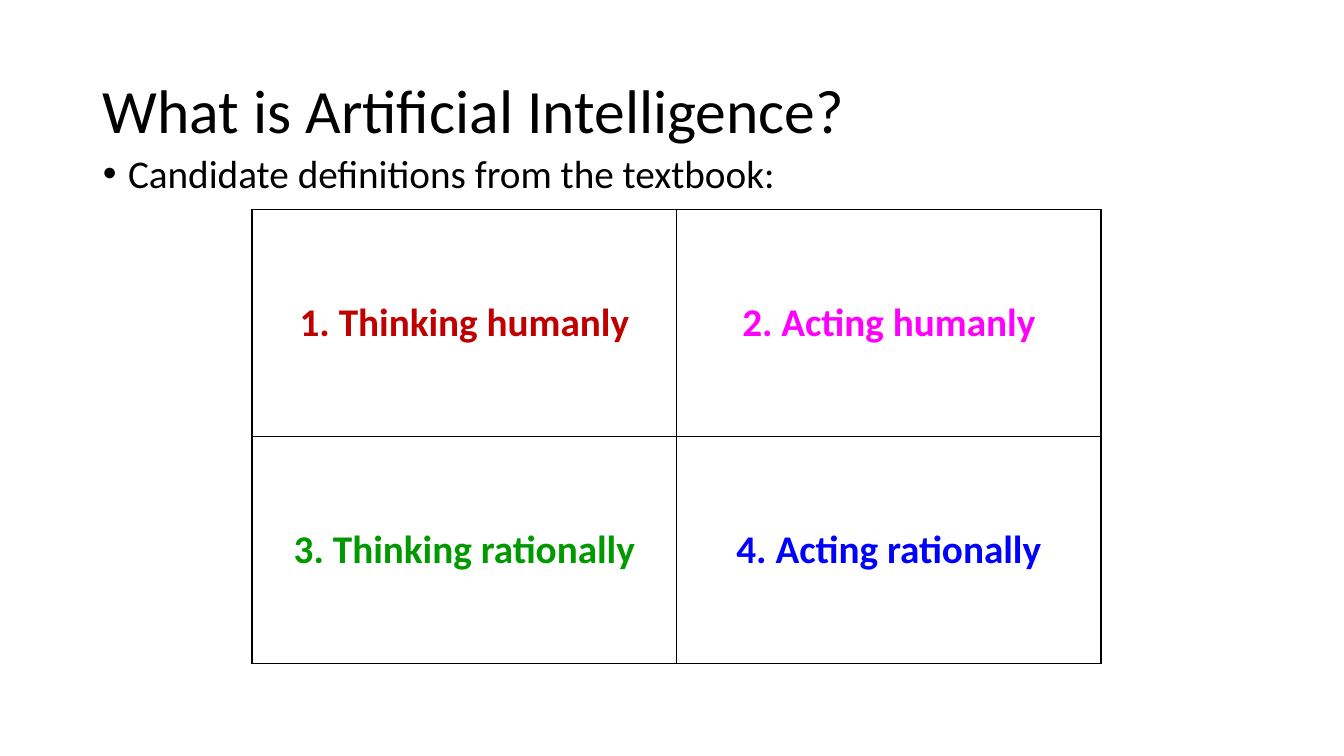
"""Build a slide of four candidate definitions of artificial intelligence."""
from lxml import etree
from pptx import Presentation
from pptx.dml.color import RGBColor
from pptx.enum.text import MSO_ANCHOR, MSO_AUTO_SIZE, PP_ALIGN
from pptx.oxml.ns import qn
from pptx.util import Inches, Pt

MIDDLE, TOP = MSO_ANCHOR.MIDDLE, MSO_ANCHOR.TOP
LEFT, CENTER = PP_ALIGN.LEFT, PP_ALIGN.CENTER
FIXED = MSO_AUTO_SIZE.NONE

FONT = "Calibri"
COLORS = {"black": "000000", "white": "FFFFFF", "red": "C00000",
          "pink": "FF00FF", "green": "009900", "blue": "0000FF"}
TITLE = "What is Artificial Intelligence?"
LEAD = "Candidate definitions from the textbook:"
GRID = [
    [("1. Thinking humanly", "red"), ("2. Acting humanly", "pink")],
    [("3. Thinking rationally", "green"), ("4. Acting rationally", "blue")],
]
TITLE_BOX = (0.92, 0.4, 11.5, 1.45)
BODY_BOX = (0.92, 1.48, 11.5, 5.28)
GRID_BOX = (2.5, 2.08, 8.42, 4.5)


def style(para, size, color, align, bold=False):
    para.alignment = align
    font = para.font
    font.name, font.size, font.bold = FONT, Pt(size), bold
    font.color.rgb = RGBColor.from_string(COLORS[color])


def fill_holder(holder, box, text, size, anchor):
    holder.left, holder.top, holder.width, holder.height = map(Inches, box)
    frame = holder.text_frame
    frame.text = text
    frame.auto_size = FIXED
    frame.word_wrap = True
    frame.vertical_anchor = anchor
    para = frame.paragraphs[0]
    para.line_spacing = 0.9
    style(para, size, "black", LEFT)
    return para


def add_bullet(para):
    props = para._p.get_or_add_pPr()
    props.set("marL", str(Inches(0.25)))
    props.set("indent", str(-Inches(0.25)))
    face = etree.Element(qn("a:buFont"), typeface="Arial")
    mark = etree.Element(qn("a:buChar"), char="•")
    spot = props.find(qn("a:defRPr"))
    spot.addprevious(face)
    spot.addprevious(mark)


def add_border(cell):
    props = cell._tc.get_or_add_tcPr()
    for spot, side in enumerate(("lnL", "lnR", "lnT", "lnB")):
        line = etree.Element(qn(f"a:{side}"), w=str(Pt(1)))
        solid = etree.SubElement(line, qn("a:solidFill"))
        etree.SubElement(solid, qn("a:srgbClr"), val=COLORS["black"])
        props.insert(spot, line)


def add_grid(slide):
    rows, cols = len(GRID), len(GRID[0])
    table = slide.shapes.add_table(rows, cols, *map(Inches, GRID_BOX)).table
    table.first_row = table.horz_banding = False
    for r, row in enumerate(GRID):
        for c, (text, color) in enumerate(row):
            cell = table.cell(r, c)
            cell.text = text
            cell.vertical_anchor = MIDDLE
            cell.fill.solid()
            cell.fill.fore_color.rgb = RGBColor.from_string(COLORS["white"])
            style(cell.text_frame.paragraphs[0], 28, color, CENTER, True)
            add_border(cell)


def main():
    deck = Presentation()
    deck.slide_width, deck.slide_height = Inches(13.33), Inches(7.5)
    slide = deck.slides.add_slide(deck.slide_layouts[1])
    fill_holder(slide.shapes.title, TITLE_BOX, TITLE, 44, MIDDLE)
    lead = fill_holder(slide.placeholders[1], BODY_BOX, LEAD, 28, TOP)
    lead.space_before = Pt(10)
    add_bullet(lead)
    add_grid(slide)
    deck.save("out.pptx")


if __name__ == "__main__":
    main()
